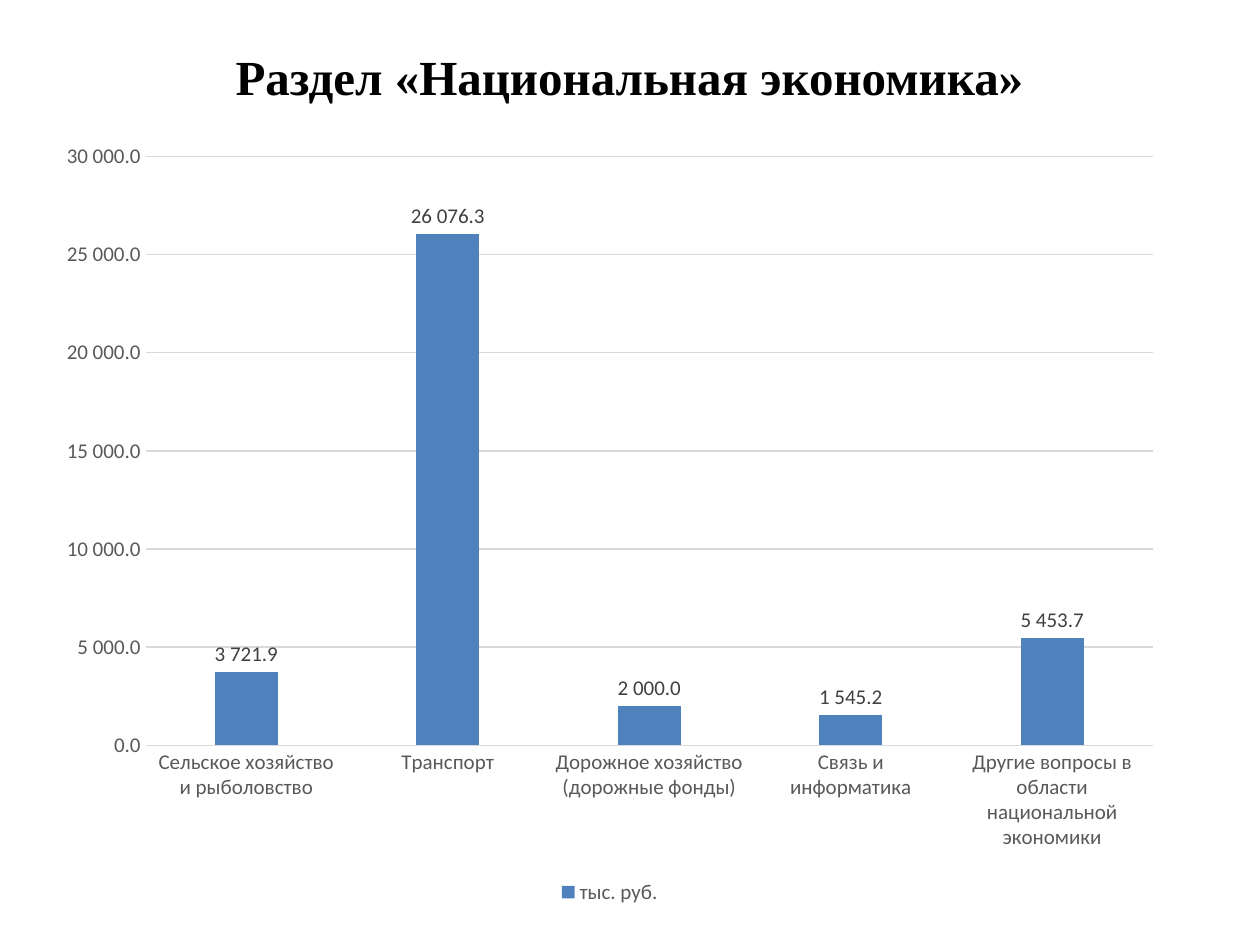
from dataclasses import dataclass

from pptx import Presentation
from pptx.chart.data import CategoryChartData
from pptx.dml.color import RGBColor
from pptx.enum import chart as ch, text
from pptx.util import Inches, Pt


@dataclass(frozen=True)
class Theme:
    title: RGBColor = RGBColor.from_string("000000")
    axis_text: RGBColor = RGBColor.from_string("595959")
    label_text: RGBColor = RGBColor.from_string("404040")
    grid: RGBColor = RGBColor.from_string("D9D9D9")
    bar: RGBColor = RGBColor.from_string("4F81BD")
    title_font: str = "Times New Roman"
    chart_font: str = "Calibri"
    title_size: Pt = Pt(28)
    chart_size: Pt = Pt(12)
    line_width: Pt = Pt(0.75)


THEME = Theme()
NUMBER_FORMAT = r"#\ ##0.0"
EXPENSES = {
    "Сельское хозяйство и рыболовство": 3721.9,
    "Транспорт": 26076.3,
    "Дорожное хозяйство (дорожные фонды)": 2000,
    "Связь и информатика": 1545.2,
    "Другие вопросы в области национальной экономики": 5453.7,
}


def set_font(font, name, size, color, bold=False):
    font.name, font.size, font.bold = name, size, bold
    font.color.rgb = color


prs = Presentation()
prs.slide_width, prs.slide_height = Inches(10), Inches(7.5)
s = prs.slides.add_slide(prs.slide_layouts[5])

# Title
title = s.shapes.title
title.left, title.top = Inches(0.5), Inches(0.3)
title.width, title.height = Inches(8.99), Inches(0.61)
tf = title.text_frame
tf.text = "Раздел «Национальная экономика»"
tf.vertical_anchor = text.MSO_ANCHOR.MIDDLE
p = tf.paragraphs[0]
p.alignment = text.PP_ALIGN.CENTER
set_font(p.font, THEME.title_font, THEME.title_size, THEME.title, bold=True)

# Column chart
data = CategoryChartData(number_format=NUMBER_FORMAT)
data.categories = list(EXPENSES)
data.add_series("тыс. руб.", list(EXPENSES.values()))
chart = s.shapes.add_chart(
    ch.XL_CHART_TYPE.COLUMN_CLUSTERED,
    Inches(0.35), Inches(1.02), Inches(8.98), Inches(6.2), data,
).chart
chart.has_title = False
set_font(chart.font, THEME.chart_font, THEME.chart_size, THEME.axis_text)

chart.has_legend = True
chart.legend.position = ch.XL_LEGEND_POSITION.BOTTOM
chart.legend.include_in_layout = False

category_axis, value_axis = chart.category_axis, chart.value_axis
for axis in (category_axis, value_axis):
    axis.major_tick_mark = axis.minor_tick_mark = ch.XL_TICK_MARK.NONE
for line in (category_axis.format.line, value_axis.major_gridlines.format.line):
    line.color.rgb = THEME.grid
    line.width = THEME.line_width
value_axis.format.line.fill.background()
value_axis.minimum_scale, value_axis.maximum_scale = 0, 30000
value_axis.major_unit = 5000
value_axis.tick_labels.number_format = NUMBER_FORMAT
value_axis.tick_labels.number_format_is_linked = False

plot = chart.plots[0]
plot.vary_by_categories = False
plot.gap_width, plot.overlap = 219, -27
fill = plot.series[0].format.fill
fill.solid()
fill.fore_color.rgb = THEME.bar

plot.has_data_labels = True
labels = plot.data_labels
labels.show_value = True
labels.position = ch.XL_LABEL_POSITION.OUTSIDE_END
labels.number_format = NUMBER_FORMAT
labels.number_format_is_linked = False
set_font(labels.font, THEME.chart_font, THEME.chart_size, THEME.label_text)

prs.save("out.pptx")
